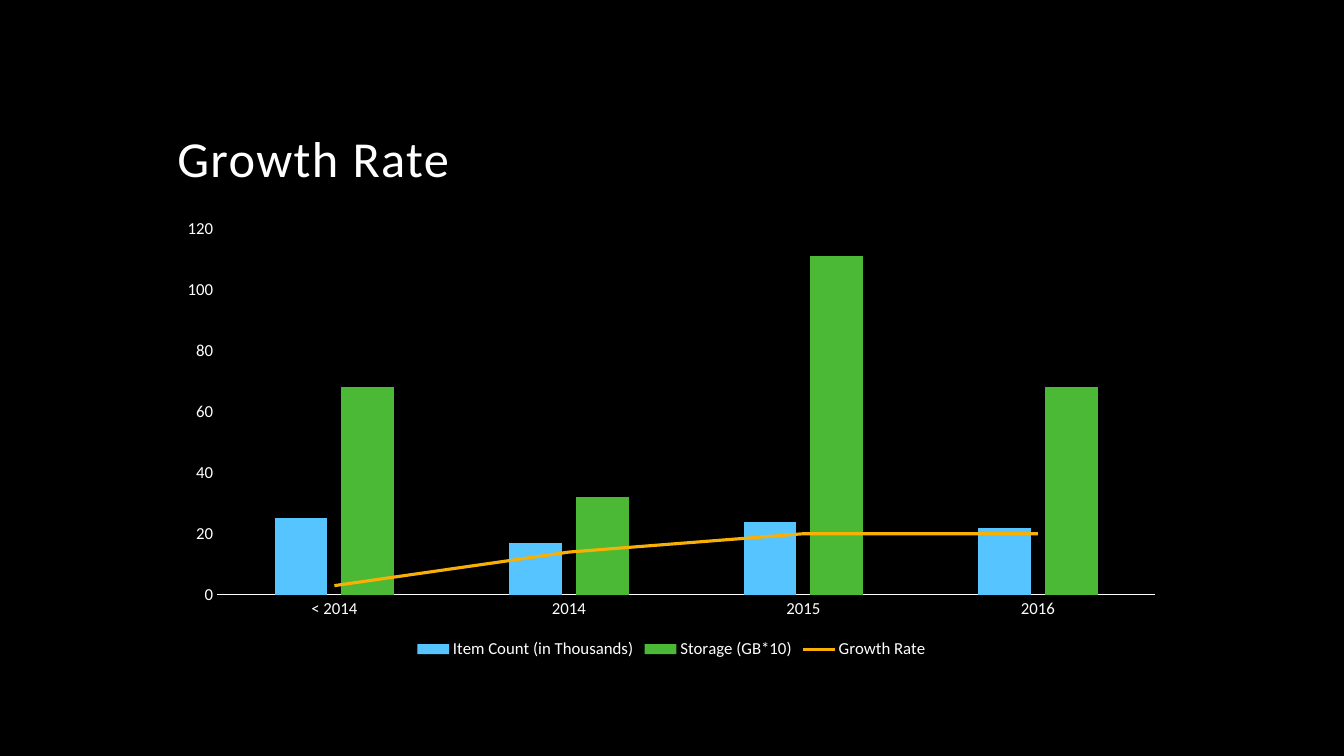
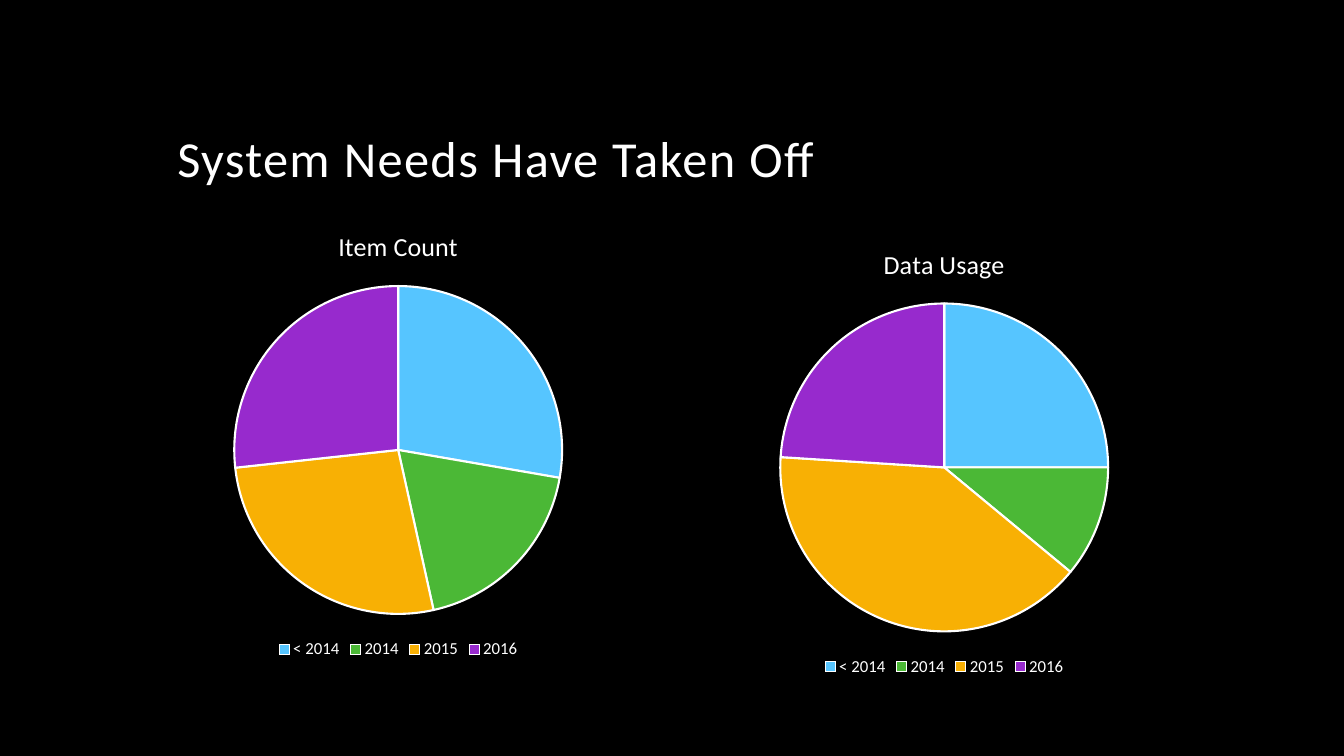
from copy import deepcopy
from dataclasses import dataclass

from lxml import etree
from pptx import Presentation
from pptx import util as u
from pptx.chart import data as cd
from pptx.dml.color import RGBColor
from pptx.enum import chart as ec
from pptx.enum import text as et
from pptx.oxml import ns, parse_xml


@dataclass(frozen=True)
class Theme:
    font: str = "Calibri"
    back: str = "000000"
    ink: str = "FFFFFF"
    accents: tuple = ("56C5FF", "4BB836", "F8B004", "972ACD")
    title: float = 36
    chart: float = 10
    label: float = 12
    chart_title: float = 18.6
    spacing: int = 100


T = Theme()
YEARS = ("< 2014", "2014", "2015", "2016")
TITLE_BOX = (4.22, 1.07, 25.4, 3.81)


def put(obj, **values):
    for name, value in values.items():
        setattr(obj, name, value)


def style_font(font, size):
    put(font, name=T.font, size=u.Pt(size))
    font.color.rgb = RGBColor.from_string(T.ink)


def paint(fill, color):
    fill.solid()
    fill.fore_color.rgb = RGBColor.from_string(color)


def stroke(line, color, width):
    paint(line.fill, color)
    line.width = u.Pt(width)


def add_slide(prs, title):
    s = prs.slides.add_slide(prs.slide_layouts[6])
    paint(s.background.fill, T.back)
    tf = s.shapes.add_textbox(*map(u.Cm, TITLE_BOX)).text_frame
    put(tf, word_wrap=True, vertical_anchor=et.MSO_ANCHOR.BOTTOM)
    p = tf.paragraphs[0]
    p.line_spacing = 0.9
    r = p.add_run()
    r.text = title
    style_font(r.font, T.title)
    r.font._element.set("spc", str(T.spacing))
    return s


def add_chart(s, box, kind, series):
    data = cd.CategoryChartData()
    data.categories = YEARS
    for name, values in series:
        data.add_series(name, values)
    chart = s.shapes.add_chart(kind, *map(u.Cm, box), data).chart
    style_font(chart.font, T.chart)
    chart.has_legend = True
    put(chart.legend, position=ec.XL_LEGEND_POSITION.BOTTOM, include_in_layout=False)
    style_font(chart.legend.font, T.label)
    return chart


def move_last_series_to_line(chart):
    bar = chart.plots[0]._element
    ser = bar.findall(ns.qn("c:ser"))[-1]
    for flag in ser.findall(ns.qn("c:invertIfNegative")):
        ser.remove(flag)
    line = parse_xml(
        f'<c:lineChart {ns.nsdecls("c")}><c:grouping val="standard"/>'
        '<c:varyColors val="0"/></c:lineChart>')
    line.append(ser)
    etree.SubElement(line, ns.qn("c:marker")).set("val", "1")
    for ax in bar.findall(ns.qn("c:axId")):
        line.append(deepcopy(ax))
    bar.addnext(line)


def growth_chart(s, box, series):
    chart = add_chart(s, box, ec.XL_CHART_TYPE.COLUMN_CLUSTERED, series)
    chart.has_title = False
    move_last_series_to_line(chart)
    bars, lines = chart.plots
    put(bars, gap_width=219, overlap=-27, vary_by_categories=False)
    for ser, color in zip(bars.series, T.accents):
        paint(ser.format.fill, color)
    trend = lines.series[0]
    trend.smooth = False
    trend.marker.style = ec.XL_MARKER_STYLE.NONE
    stroke(trend.format.line, T.accents[2], 2.25)
    for axis in (chart.category_axis, chart.value_axis):
        put(axis, has_major_gridlines=False,
            major_tick_mark=ec.XL_TICK_MARK.NONE, minor_tick_mark=ec.XL_TICK_MARK.NONE)
        style_font(axis.tick_labels.font, T.label)
    stroke(chart.category_axis.format.line, T.ink, 0.75)
    chart.value_axis.format.line.fill.background()
    put(chart.value_axis, minimum_scale=0, maximum_scale=120, major_unit=20)


def share_pie(s, box, name, values):
    chart = add_chart(s, box, ec.XL_CHART_TYPE.PIE, [(name, values)])
    chart.has_title = True
    tf = chart.chart_title.text_frame
    tf.text = name
    font = tf.paragraphs[0].runs[0].font
    style_font(font, T.chart_title)
    font.bold = False
    plot = chart.plots[0]
    plot.vary_by_categories = True
    for i, color in enumerate(T.accents):
        fmt = plot.series[0].points[i].format
        paint(fmt.fill, color)
        stroke(fmt.line, T.ink, 1.5)


def main():
    prs = Presentation()
    put(prs, slide_width=u.Cm(33.87), slide_height=u.Cm(19.05))

    s = add_slide(prs, "Growth Rate")
    growth_chart(s, (4.22, 5.28, 25.4, 11.43), [
        ("Item Count (in Thousands)", (25, 17, 24, 22)),
        ("Storage (GB*10)", (68, 32, 111, 68)),
        ("Growth Rate", (3, 14, 20, 20)),
    ])

    s = add_slide(prs, "System Needs Have Taken Off")
    share_pie(s, (4.22, 5.28, 11.63, 11.43), "Item Count", (28, 19, 27, 27))
    share_pie(s, (17.98, 5.72, 11.63, 11.43), "Data Usage", (25, 11, 40, 24))

    prs.save("out.pptx")


if __name__ == "__main__":
    main()
